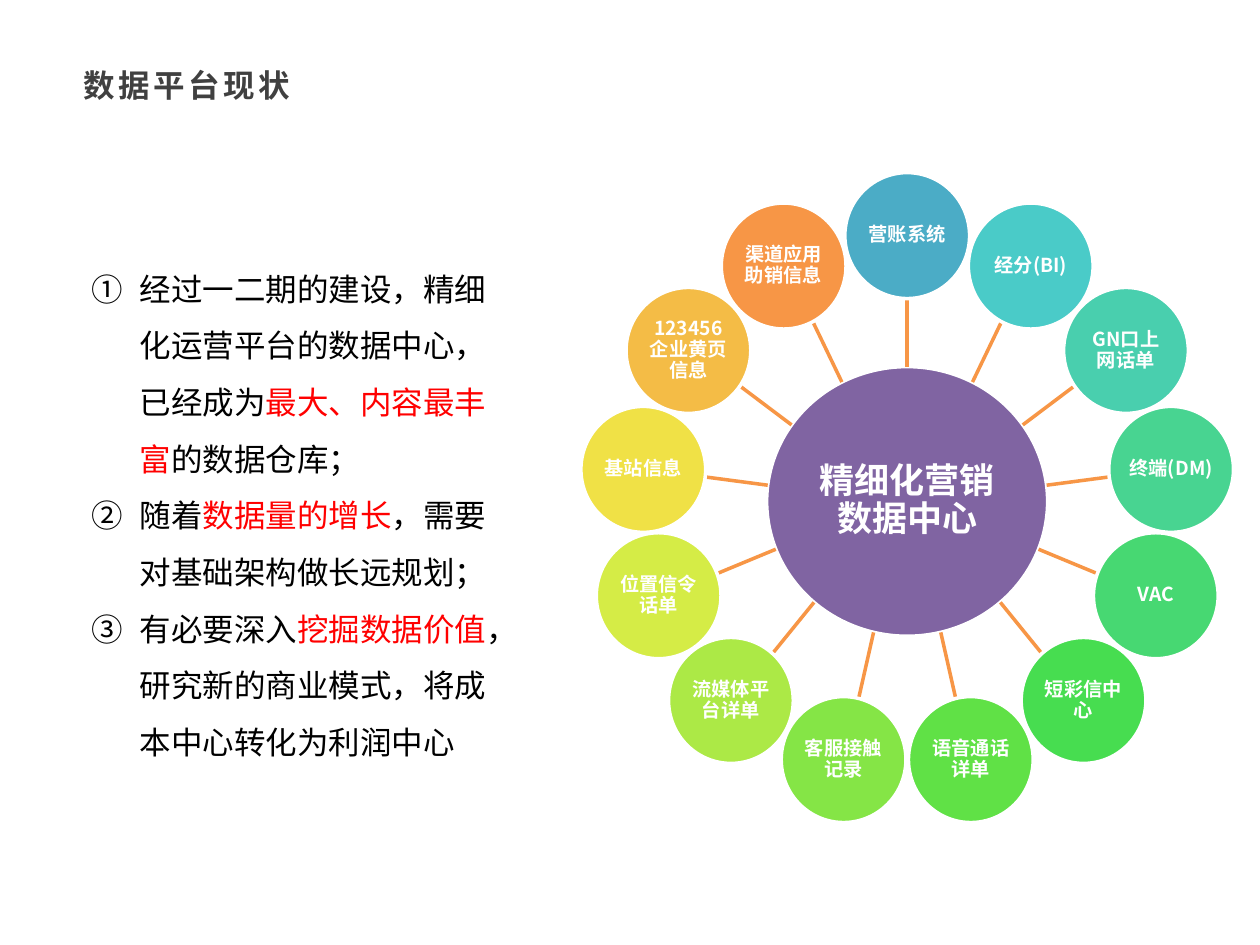
from dataclasses import dataclass
from math import cos, pi, sin

from lxml import etree
from pptx import Presentation
from pptx.dml.color import RGBColor
from pptx.enum import shapes, text
from pptx.oxml import ns
from pptx.util import Inches, Pt

FONT = "Noto Sans CJK SC"
WHITE = RGBColor(0xFF, 0xFF, 0xFF)
BLACK = RGBColor(0x00, 0x00, 0x00)
RED = RGBColor(0xFF, 0x00, 0x00)
GREY = RGBColor(0x40, 0x40, 0x40)
PURPLE = RGBColor(0x80, 0x64, 0xA2)
ORANGE = RGBColor(0xF7, 0x96, 0x46)

CENTER_X, CENTER_Y = 7.2, 3.98
HUB_W, HUB_H = 2.23, 2.14
SOURCE_W, SOURCE_H = 0.99, 1.0
RING_RADIUS = 2.11
SPOKE_END = 1.61


@dataclass(frozen=True)
class Source:
    label: str
    color: RGBColor


@dataclass(frozen=True)
class Point:
    before: str
    emphasis: str
    after: str


SOURCES = [
    Source("营账系统", RGBColor(0x4B, 0xAC, 0xC6)),
    Source("经分(BI)", RGBColor(0x4A, 0xCB, 0xC8)),
    Source("GN口上网话单", RGBColor(0x49, 0xCF, 0xAE)),
    Source("终端(DM)", RGBColor(0x48, 0xD4, 0x91)),
    Source("VAC", RGBColor(0x47, 0xD8, 0x72)),
    Source("短彩信中心", RGBColor(0x47, 0xDD, 0x50)),
    Source("语音通话详单", RGBColor(0x60, 0xE1, 0x46)),
    Source("客服接触记录", RGBColor(0x85, 0xE5, 0x46)),
    Source("流媒体平台详单", RGBColor(0xAC, 0xE9, 0x46)),
    Source("位置信令话单", RGBColor(0xD5, 0xEC, 0x46)),
    Source("基站信息", RGBColor(0xF0, 0xE1, 0x46)),
    Source("123456企业黄页信息", RGBColor(0xF4, 0xBC, 0x46)),
    Source("渠道应用助销信息", ORANGE),
]

POINTS = [
    Point("经过一二期的建设，精细化运营平台的数据中心，已经成为",
          "最大、内容最丰富", "的数据仓库；"),
    Point("随着", "数据量的增长", "，需要对基础架构做长远规划；"),
    Point("有必要深入", "挖掘数据价值",
          "，研究新的商业模式，将成本中心转化为利润中心"),
]


def add_run(p, content: str, size: float, color: RGBColor, bold: bool = False):
    r = p.add_run()
    r.text = content
    r.font.size = Pt(size)
    r.font.bold = bold
    r.font.color.rgb = color
    r.font.name = FONT
    rPr = r.font._element
    etree.SubElement(rPr, ns.qn("a:ea"), typeface=FONT)
    return rPr


def add_circle(s, x: float, y: float, w: float, h: float,
               label: str, size: float, color: RGBColor) -> None:
    sp = s.shapes.add_shape(shapes.MSO_SHAPE.OVAL, Inches(x - w / 2),
                            Inches(y - h / 2), Inches(w), Inches(h))
    sp.shadow.inherit = False
    sp.fill.solid()
    sp.fill.fore_color.rgb = color
    sp.line.color.rgb = WHITE
    sp.line.width = Pt(2)
    tf = sp.text_frame
    tf.word_wrap = True
    tf.vertical_anchor = text.MSO_ANCHOR.MIDDLE
    tf.margin_left = tf.margin_right = Inches(0.01)
    tf.margin_top = tf.margin_bottom = Inches(0.01)
    p = tf.paragraphs[0]
    p.alignment = text.PP_ALIGN.CENTER
    p.line_spacing = 0.9
    add_run(p, label, size, WHITE, True)


def add_spoke(s, angle: float) -> None:
    dx, dy = sin(angle), -cos(angle)
    cx = s.shapes.add_connector(
        shapes.MSO_CONNECTOR.STRAIGHT,
        Inches(CENTER_X + HUB_W / 2 * dx), Inches(CENTER_Y + HUB_H / 2 * dy),
        Inches(CENTER_X + SPOKE_END * dx), Inches(CENTER_Y + SPOKE_END * dy))
    cx.line.color.rgb = ORANGE
    cx.line.width = Pt(2)
    etree.SubElement(cx._element.spPr, ns.qn("a:effectLst"))


def add_wheel(s) -> None:
    add_circle(s, CENTER_X, CENTER_Y, HUB_W, HUB_H,
               "精细化营销数据中心", 20, PURPLE)
    for i, source in enumerate(SOURCES):
        angle = 2 * pi * i / len(SOURCES)
        add_spoke(s, angle)
        add_circle(s, CENTER_X + RING_RADIUS * sin(angle),
                   CENTER_Y - RING_RADIUS * cos(angle),
                   SOURCE_W, SOURCE_H, source.label, 11, source.color)


def add_text_frame(s, x: float, y: float, w: float, h: float):
    tf = s.shapes.add_textbox(Inches(x), Inches(y), Inches(w), Inches(h)).text_frame
    tf.word_wrap = True
    return tf


def add_title(s) -> None:
    tf = add_text_frame(s, 0.55, 0.48, 8.9, 0.48)
    tf.margin_left, tf.margin_right = Inches(0.11), Inches(0.08)
    tf.margin_top = tf.margin_bottom = Inches(0.04)
    rPr = add_run(tf.paragraphs[0], "数据平台现状", 18, GREY, True)
    rPr.set("spc", "200")


def add_points(s) -> None:
    tf = add_text_frame(s, 0.63, 1.94, 3.46, 4.19)
    tf.auto_size = text.MSO_AUTO_SIZE.SHAPE_TO_FIT_TEXT
    for i, point in enumerate(POINTS):
        p = tf.add_paragraph() if i else tf.paragraphs[0]
        p.line_spacing = 1.5
        pPr = p._p.get_or_add_pPr()
        pPr.set("marL", str(Inches(0.38)))
        pPr.set("indent", str(-Inches(0.38)))
        etree.SubElement(pPr, ns.qn("a:buFont"), typeface="+mj-ea")
        etree.SubElement(pPr, ns.qn("a:buAutoNum"), type="circleNumDbPlain")
        add_run(p, point.before, 18, BLACK)
        add_run(p, point.emphasis, 18, RED)
        add_run(p, point.after, 18, BLACK)


def main() -> None:
    prs = Presentation()
    prs.slide_width, prs.slide_height = Inches(10), Inches(7.5)
    s = prs.slides.add_slide(prs.slide_layouts[6])
    add_title(s)
    add_wheel(s)
    add_points(s)
    prs.save("out.pptx")


if __name__ == "__main__":
    main()
